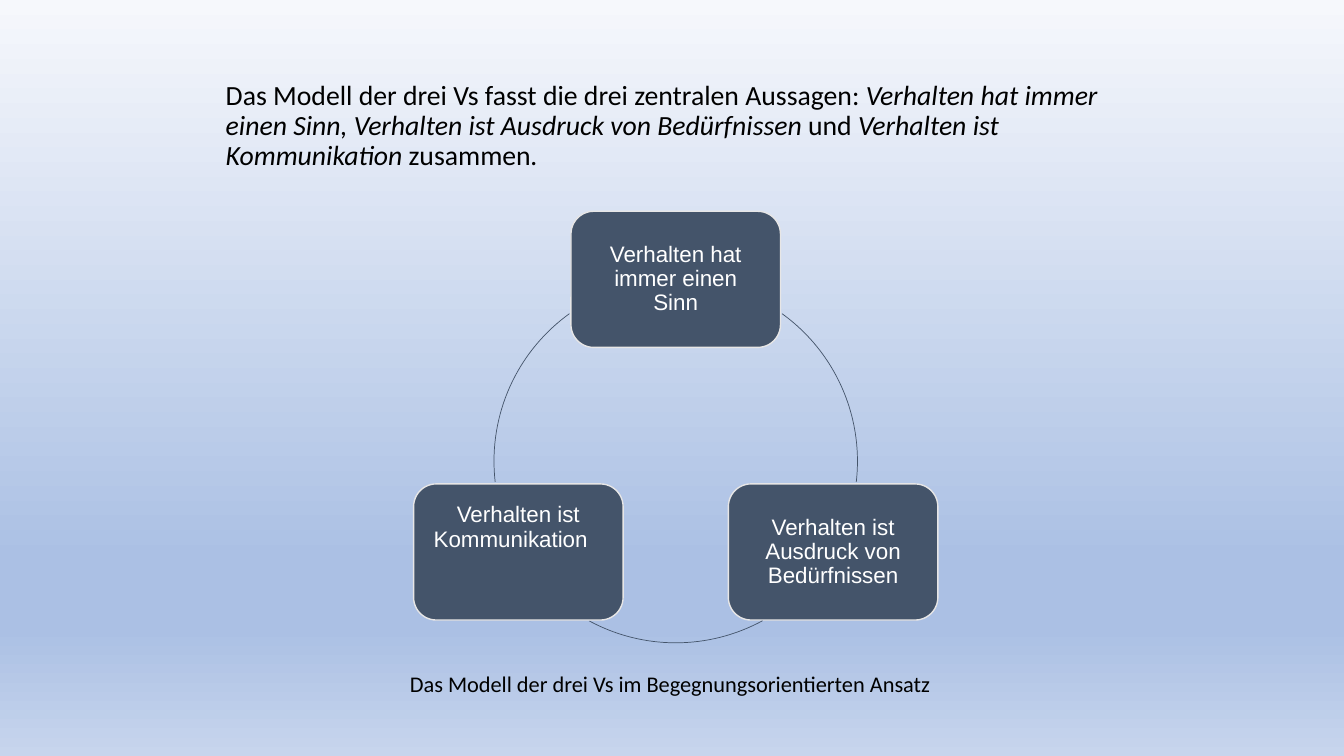
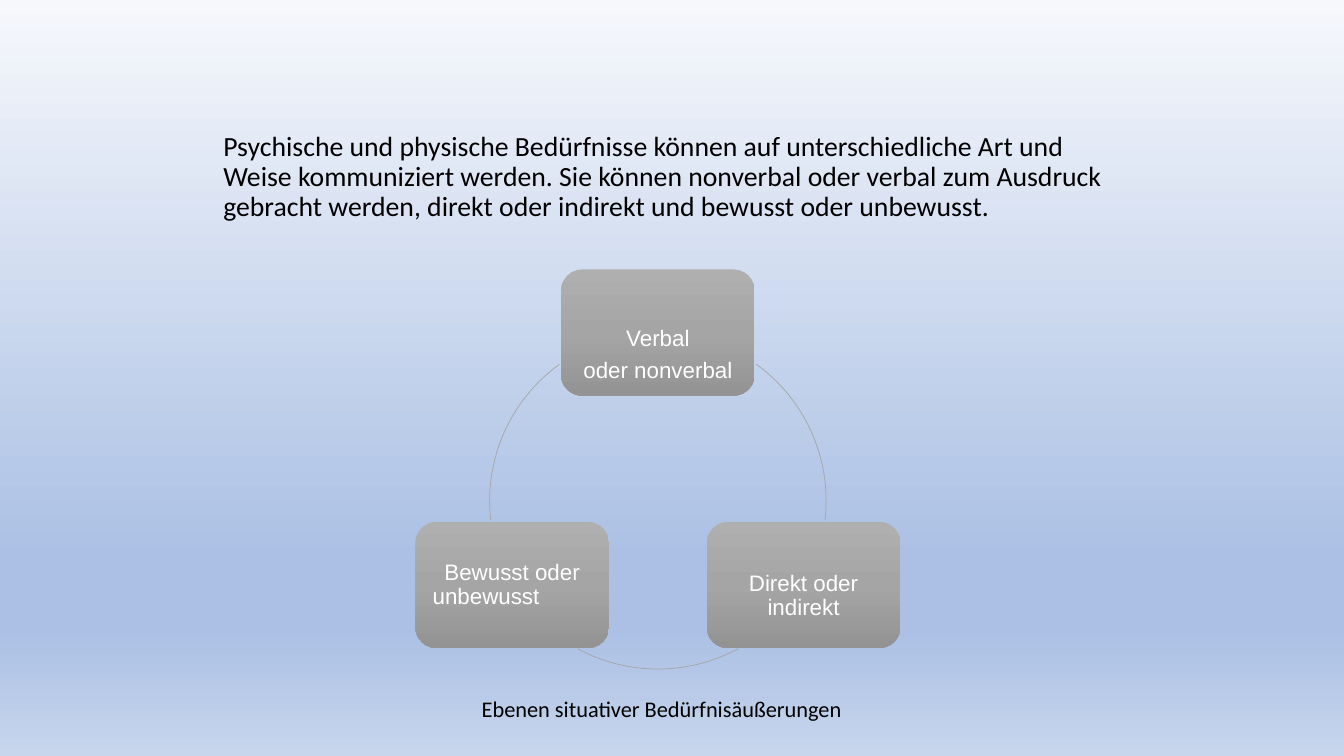
from dataclasses import dataclass
from math import cos, radians, sin

from lxml import etree
from pptx import Presentation
from pptx.dml.color import RGBColor
from pptx.enum.shapes import MSO_SHAPE
from pptx.enum.text import MSO_ANCHOR, PP_ALIGN
from pptx.oxml.ns import qn
from pptx.util import Cm, Pt

ROUND = MSO_SHAPE.ROUNDED_RECTANGLE
ARC = MSO_SHAPE.ARC
LEFT = PP_ALIGN.LEFT
CENTER = PP_ALIGN.CENTER
TOP = MSO_ANCHOR.TOP
MIDDLE = MSO_ANCHOR.MIDDLE


@dataclass(frozen=True)
class Theme:
    back: tuple = ((0, "F6F8FC"), (74, "ABC0E4"), (83, "ABC0E4"), (100, "C7D5ED"))
    ink: str = "000000"
    white: str = "FFFFFF"
    slate: str = "44546A"
    edge: str = "E7E6E6"
    gray: str = "A5A5A5"
    shade: tuple = ((0, "AFAFAF"), (50, "A5A5A5"), (100, "939393"))
    font: str = "Calibri"
    node_font: str = "Arial"
    lead: float = 19.8
    small: float = 16


@dataclass(frozen=True)
class Run:
    text: str
    italic: bool = False


@dataclass(frozen=True)
class Para:
    runs: tuple
    align: PP_ALIGN = LEFT
    gap: float = 0


@dataclass(frozen=True)
class Node:
    paras: tuple
    drop: float = 0


@dataclass(frozen=True)
class Ring:
    x: float
    y: float
    radius: float
    width: float
    height: float
    pad: float
    line: str
    nodes: tuple
    fill: str = ""
    grad: tuple = ()
    edge: str = ""


@dataclass(frozen=True)
class Page:
    lead: Para
    lead_at: tuple
    note: str
    note_at: tuple
    ring: Ring


THEME = Theme()
ANGLES = (-90, 30, 150)
ARCS = ((305.8, 6.6), (61.5, 118.5), (173.4, 234.2))


def mid(text: str, gap: float = 0) -> Para:
    return Para((Run(text),), CENTER, gap)


def side(text: str) -> Para:
    return Para((Run(text),))


PAGES = (
    Page(
        Para((
            Run("Das Modell der drei Vs fasst die drei zentralen Aussagen: "),
            Run("Verhalten hat immer einen Sinn, "
                "Verhalten ist Ausdruck von Bedürfnissen ", True),
            Run("und "),
            Run("Verhalten ist Kommunikation ", True),
            Run("zusammen"),
            Run(".", True),
        )),
        (5.44, 1.93),
        "Das Modell der drei Vs im Begegnungsorientierten Ansatz",
        (10.08, 16.84),
        Ring(17.03, 11.62, 4.58, 5.28, 3.43, 0.34, THEME.slate, (
            Node((mid("Verhalten hat immer einen Sinn"),)),
            Node((mid("Verhalten ist Ausdruck von Bedürfnissen"),)),
            Node((mid("Verhalten ist"), side("Kommunikation")), -0.61),
        ), fill=THEME.slate, edge=THEME.edge),
    ),
    Page(
        side("Psychische und physische Bedürfnisse können auf unterschiedliche "
             "Art und Weise kommuniziert werden. Sie können nonverbal oder verbal "
             "zum Ausdruck gebracht werden, direkt oder indirekt und bewusst oder "
             "unbewusst."),
        (5.38, 3.2),
        "Ebenen situativer Bedürfnisäußerungen",
        (11.89, 17.48),
        Ring(16.58, 12.62, 4.24, 4.88, 3.18, 0.28, THEME.gray, (
            Node((mid("Verbal"), mid("oder nonverbal", 5.6)), 0.57),
            Node((mid("Direkt oder indirekt"),), 0.28),
            Node((mid("Bewusst oder"), side("unbewusst"))),
        ), grad=THEME.shade),
    ),
)


def paint(owner, fill, stops: tuple) -> None:
    fill.gradient()
    fill.gradient_angle = 270
    stop_list = owner.element.find(".//" + qn("a:gsLst"))
    for old in list(stop_list):
        stop_list.remove(old)
    for place, color in stops:
        stop = etree.SubElement(stop_list, qn("a:gs"), pos=str(place * 1000))
        etree.SubElement(stop, qn("a:srgbClr"), val=color)


def write(frame, paras: tuple, *, size: float, color: str = THEME.ink,
          font: str = THEME.font, anchor: MSO_ANCHOR = TOP) -> None:
    frame.word_wrap = True
    frame.vertical_anchor = anchor
    for index, para in enumerate(paras):
        line = frame.add_paragraph() if index else frame.paragraphs[0]
        line.alignment = para.align
        line.line_spacing = 0.9
        line.space_before = Pt(para.gap)
        for part in para.runs:
            run = line.add_run()
            run.text = part.text
            run.font.name = font
            run.font.size = Pt(size)
            run.font.italic = part.italic
            run.font.color.rgb = RGBColor.from_string(color)


def add_node(slide, ring: Ring, node: Node, angle: float) -> None:
    x = ring.x + ring.radius * cos(radians(angle)) - ring.width / 2
    y = ring.y + ring.radius * sin(radians(angle)) - ring.height / 2
    box = slide.shapes.add_shape(ROUND, Cm(x), Cm(y), Cm(ring.width), Cm(ring.height))
    box.shadow.inherit = False
    if ring.grad:
        paint(box, box.fill, ring.grad)
    else:
        box.fill.solid()
        box.fill.fore_color.rgb = RGBColor.from_string(ring.fill)
    if ring.edge:
        box.line.color.rgb = RGBColor.from_string(ring.edge)
        box.line.width = Pt(1)
    else:
        box.line.fill.background()
    frame = box.text_frame
    frame.margin_left = frame.margin_right = Cm(ring.pad)
    frame.margin_top = Cm(ring.pad + 2 * max(node.drop, 0))
    frame.margin_bottom = Cm(ring.pad + 2 * max(-node.drop, 0))
    write(frame, node.paras, size=THEME.small, color=THEME.white,
          font=THEME.node_font, anchor=MIDDLE)


def add_arc(slide, ring: Ring, start: float, end: float) -> None:
    span = Cm(2 * ring.radius)
    arc = slide.shapes.add_shape(
        ARC, Cm(ring.x - ring.radius), Cm(ring.y - ring.radius), span, span)
    arc.adjustments[0] = start * 0.6
    arc.adjustments[1] = end * 0.6
    arc.shadow.inherit = False
    arc.fill.background()
    arc.line.color.rgb = RGBColor.from_string(ring.line)
    arc.line.width = Pt(0.5)


def add_page(deck, page: Page) -> None:
    slide = deck.slides.add_slide(deck.slide_layouts[6])
    paint(slide, slide.background.fill, THEME.back)
    x, y = page.lead_at
    lead = slide.shapes.add_textbox(Cm(x), Cm(y), Cm(23.1), Cm(2.54))
    write(lead.text_frame, (page.lead,), size=THEME.lead, anchor=MIDDLE)
    x, y = page.note_at
    note = slide.shapes.add_textbox(Cm(x), Cm(y), Cm(14), Cm(0.9))
    write(note.text_frame, (side(page.note),), size=THEME.small)
    for node, angle, (start, end) in zip(page.ring.nodes, ANGLES, ARCS):
        add_node(slide, page.ring, node, angle)
        add_arc(slide, page.ring, start, end)


def main() -> None:
    deck = Presentation()
    deck.slide_width = Cm(33.87)
    deck.slide_height = Cm(19.05)
    for page in PAGES:
        add_page(deck, page)
    deck.save("out.pptx")


if __name__ == "__main__":
    main()
